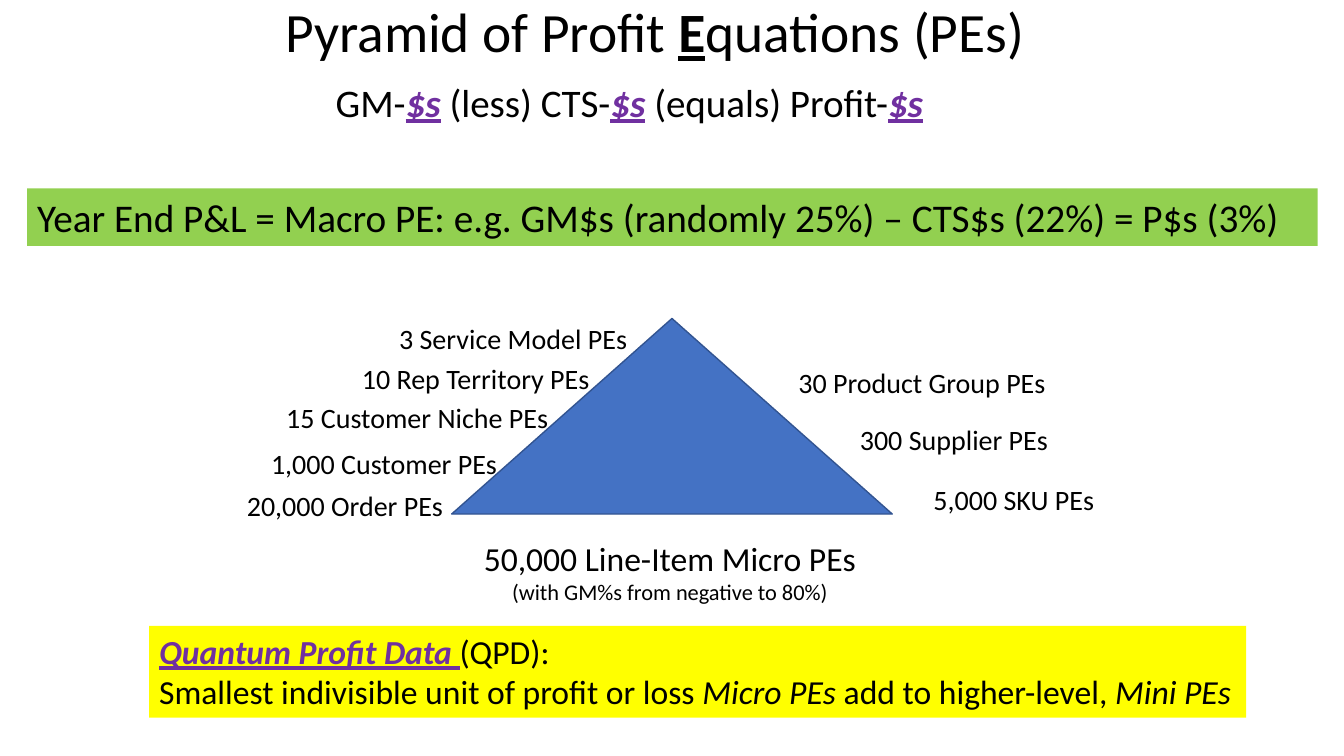
import pptx
import pptx.util
import pptx.dml.color
import pptx.enum.shapes
import pptx.enum.text

Inches = pptx.util.Inches
Pt = pptx.util.Pt

FONT = "Calibri"
BLACK, PURPLE = "000000", "7030A0"
BLUE, DARK_BLUE, GREEN, YELLOW = "4472C4", "325491", "92D050", "FFFF00"

PLAIN = {}
BOLD_UNDERLINED = {"bold": True, "underline": True}
ITALIC = {"italic": True}
KEY = {"bold": True, "italic": True, "underline": True, "color": PURPLE}

TITLE_BOX = (1.48, 0.01, 10.81, 1.25)
TITLE_INDENT, SUBTITLE_INDENT = 1.25, 1.75
TITLE_LINES = [
    (39.6, [("Pyramid of Profit ", PLAIN), ("E", BOLD_UNDERLINED), ("quations (PEs)", PLAIN)]),
    (27.9, [("GM-", PLAIN), ("$s", KEY), (" (less) CTS-", PLAIN), ("$s", KEY),
            (" (equals) Profit-", PLAIN), ("$s", KEY)]),
]

PYRAMID_BOX = (4.48, 3.16, 4.37, 1.94)

BAND_BOX = (0.27, 1.87, 12.8, 0.57)
BAND = [(28, [("Year End P&L = Macro PE: e.g. GM$s (randomly 25%) – CTS$s (22%) = P$s (3%)", PLAIN)])]

BASE_BOX = (4.7, 5.29, 3.93, 0.81)
BASE = [
    (24, [("50,000 Line-Item Micro PEs", PLAIN)]),
    (16, [("(with GM%s from negative to 80%)", PLAIN)]),
]

QUANTUM_BOX = (1.48, 6.21, 10.88, 0.91)
QUANTUM = [
    (24, [("Quantum Profit Data ", KEY), ("(QPD):", PLAIN)]),
    (24, [("Smallest indivisible unit of profit or loss ", PLAIN), ("Micro PEs ", ITALIC),
          ("add to higher-level, ", PLAIN), ("Mini PEs", ITALIC)]),
]

LABEL_HEIGHT, LABEL_SIZE = 0.44, 20
LABELS = [
    ("3 Service Model PEs", 3.86, 3.14, 2.49),
    ("10 Rep Territory PEs", 3.49, 3.54, 2.48),
    ("15 Customer Niche PEs", 2.74, 3.92, 2.83),
    ("1,000 Customer PEs", 2.59, 4.38, 2.46),
    ("20,000 Order PEs", 2.35, 4.8, 2.23),
    ("30 Product Group PEs", 7.82, 3.58, 2.68),
    ("300 Supplier PEs", 8.43, 4.14, 2.09),
    ("5,000 SKU PEs", 9.16, 4.74, 1.81),
]


def rgb(value):
    return pptx.dml.color.RGBColor.from_string(value)


def add_runs(paragraph, size, runs):
    for text, style in runs:
        run = paragraph.add_run()
        run.text = text
        run.font.name = FONT
        run.font.size = Pt(size)
        run.font.color.rgb = rgb(style.get("color", BLACK))
        for name in ("bold", "italic", "underline"):
            if name in style:
                setattr(run.font, name, style[name])


def add_text(slide, box, lines, fill=None):
    shape = slide.shapes.add_textbox(*map(Inches, box))
    frame = shape.text_frame
    frame.word_wrap = fill is not None
    frame.auto_size = pptx.enum.text.MSO_AUTO_SIZE.SHAPE_TO_FIT_TEXT
    if fill:
        shape.fill.solid()
        shape.fill.fore_color.rgb = rgb(fill)
    for index, (size, runs) in enumerate(lines):
        paragraph = frame.add_paragraph() if index else frame.paragraphs[0]
        add_runs(paragraph, size, runs)
    return shape


def set_title(slide):
    title = slide.shapes.title
    title.left, title.top, title.width, title.height = map(Inches, TITLE_BOX)
    frame = title.text_frame
    frame.auto_size = pptx.enum.text.MSO_AUTO_SIZE.NONE
    frame.vertical_anchor = pptx.enum.text.MSO_ANCHOR.MIDDLE
    paragraph = frame.paragraphs[0]
    paragraph.alignment = pptx.enum.text.PP_ALIGN.LEFT
    paragraph.line_spacing = Pt(43.5)
    properties = paragraph._p.get_or_add_pPr()
    properties.set("marL", str(Inches(SUBTITLE_INDENT)))
    properties.set("indent", str(Inches(TITLE_INDENT - SUBTITLE_INDENT)))
    for index, (size, runs) in enumerate(TITLE_LINES):
        if index:
            paragraph.add_line_break()
        add_runs(paragraph, size, runs)


def add_pyramid(slide):
    pyramid = slide.shapes.add_shape(
        pptx.enum.shapes.MSO_SHAPE.ISOSCELES_TRIANGLE, *map(Inches, PYRAMID_BOX))
    pyramid.shadow.inherit = False
    pyramid.fill.solid()
    pyramid.fill.fore_color.rgb = rgb(BLUE)
    pyramid.line.color.rgb = rgb(DARK_BLUE)
    pyramid.line.width = Pt(1)


def main():
    presentation = pptx.Presentation()
    presentation.slide_width, presentation.slide_height = Inches(13.33), Inches(7.5)
    slide = presentation.slides.add_slide(presentation.slide_layouts[5])
    set_title(slide)
    add_pyramid(slide)
    add_text(slide, BAND_BOX, BAND, GREEN)
    base = add_text(slide, BASE_BOX, BASE)
    base.text_frame.paragraphs[1].alignment = pptx.enum.text.PP_ALIGN.CENTER
    for text, left, top, width in LABELS:
        add_text(slide, (left, top, width, LABEL_HEIGHT), [(LABEL_SIZE, [(text, PLAIN)])])
    add_text(slide, QUANTUM_BOX, QUANTUM, YELLOW)
    presentation.save("out.pptx")


if __name__ == "__main__":
    main()
